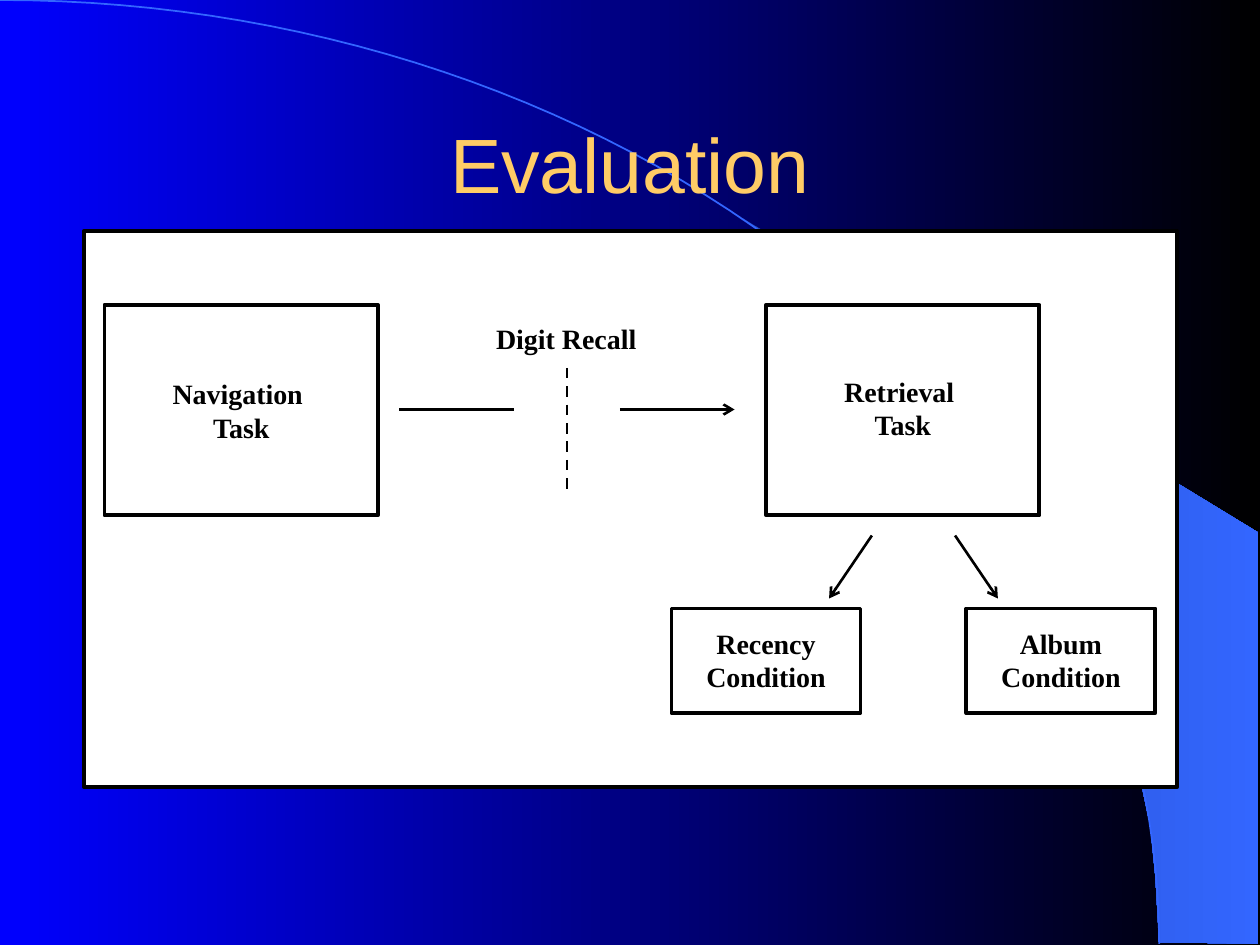
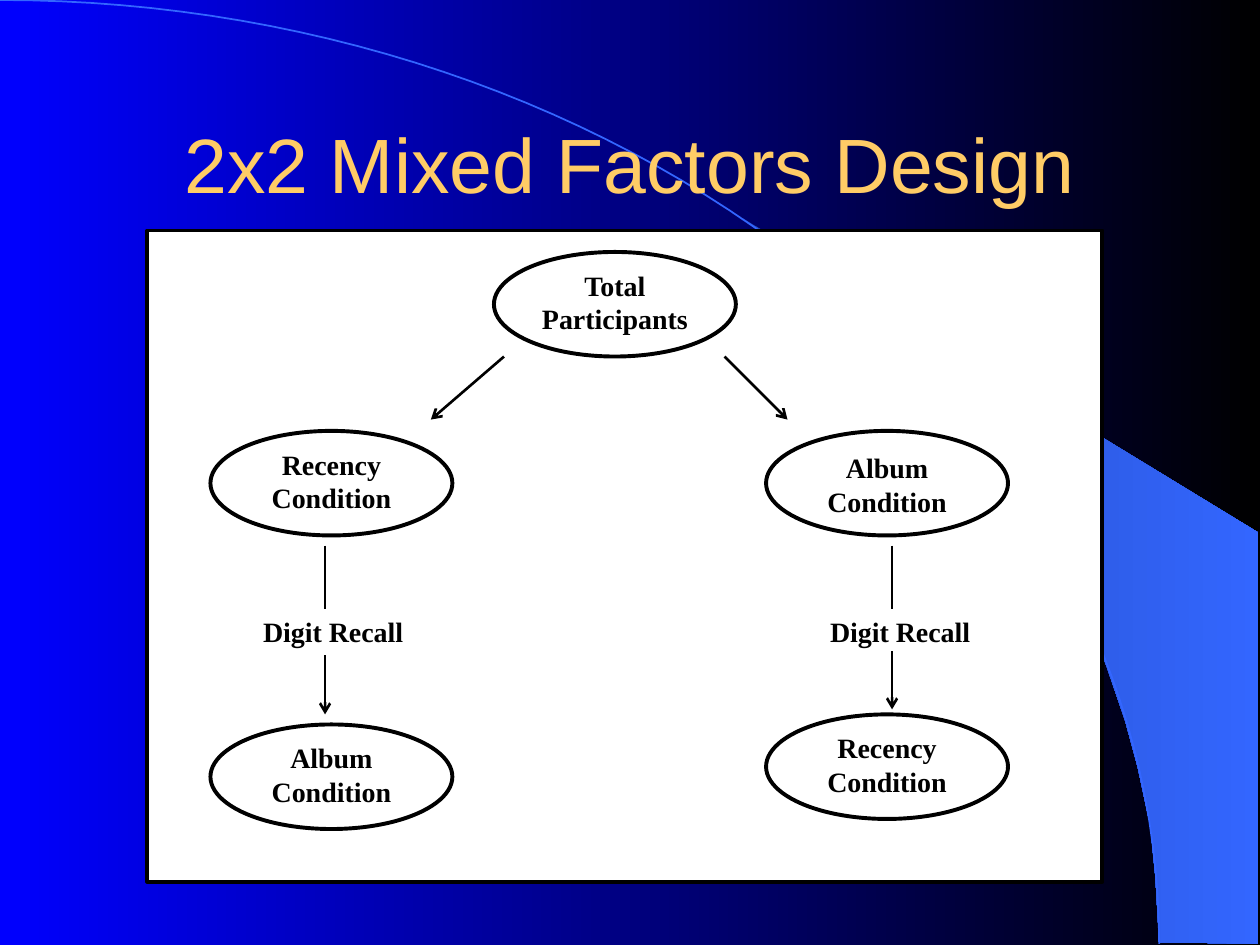
import math

from pptx import Presentation
from pptx import util as u
from pptx.dml.color import RGBColor
from pptx.enum import dml, shapes, text
from pptx.oxml import ns, xmlchemy

COLORS = {
    "sky": "0000FF",
    "night": "000000",
    "wing_dark": "2449B6",
    "accent": "3366FF",
    "title": "FFCC66",
    "panel": "FFFFFF",
    "ink": "000000",
}
TITLE_FONT, LABEL_FONT = "Arial", "Times New Roman"
RECT, OVAL = shapes.MSO_SHAPE.RECTANGLE, shapes.MSO_SHAPE.OVAL
WING = [(9.2, 7.48), (9.99, 7.49), (9.99, 4.23), (5.89, 1.73), (6.24, 1.99),
        (6.53, 2.22), (6.85, 2.5), (7.16, 2.8), (7.62, 3.3), (8.03, 3.84),
        (8.32, 4.31), (8.58, 4.79), (8.78, 5.28), (8.93, 5.72), (9.03, 6.09),
        (9.13, 6.56), (9.17, 6.96)]
ARC_WIDTH, ARC_HEIGHT, ARC_STEPS = 9.2, 7.49, 60
TASK_SIZE, CONDITION_SIZE, OVAL_SIZE = (2.17, 1.67), (1.5, 0.83), (1.92, 0.83)


def rgb(name):
    """Return a palette colour."""
    return RGBColor.from_string(COLORS[name])


def fill_gradient(fill, start, end):
    """Blend two palette colours from left to right."""
    fill.gradient()
    fill.gradient_angle = 0
    for stop, name, position in zip(fill.gradient_stops, (start, end), (0, 1)):
        stop.color.rgb = rgb(name)
        stop.position = position


def add_outline(slide, points, close):
    """Draw a freeform through points given in inches."""
    first, *rest = [(u.Inches(x), u.Inches(y)) for x, y in points]
    builder = slide.shapes.build_freeform(*first)
    builder.add_line_segments(rest, close=close)
    outline = builder.convert_to_shape()
    outline.shadow.inherit = False
    return outline


def style_layout(layout, slide):
    """Give the layout its background, title place and swoosh."""
    fill_gradient(layout.background.fill, "sky", "night")
    title = layout.placeholders[0]
    title.left, title.top = u.Inches(0.75), u.Inches(0.67)
    title.width, title.height = u.Inches(8.5), u.Inches(1.25)

    wing = add_outline(slide, WING, True)
    fill_gradient(wing.fill, "wing_dark", "accent")
    wing.line.fill.background()

    angles = [math.pi / 2 * step / ARC_STEPS for step in range(ARC_STEPS + 1)]
    arc = add_outline(slide, [(ARC_WIDTH * math.sin(a), ARC_HEIGHT * (1 - math.cos(a)))
                              for a in angles], False)
    arc.fill.background()
    arc.line.color.rgb = rgb("accent")
    arc.line.width = u.Pt(1)
    for position, swoosh in enumerate((wing, arc), start=2):
        layout.shapes.element.insert(position, swoosh.element)


def add_run(paragraph, words, font, size, color, bold=False):
    """Add one centred, formatted run."""
    paragraph.alignment = text.PP_ALIGN.CENTER
    run = paragraph.add_run()
    run.text = words
    run.font.name, run.font.size, run.font.bold = font, u.Pt(size), bold
    run.font.color.rgb = rgb(color)


def set_title(slide, words):
    """Fill the title placeholder."""
    frame = slide.shapes.title.text_frame
    frame.vertical_anchor = text.MSO_ANCHOR.MIDDLE
    add_run(frame.paragraphs[0], words, TITLE_FONT, 44, "title")


def add_box(slide, kind, left, top, width, height):
    """Add a white shape with a black border."""
    box = slide.shapes.add_shape(kind, *map(u.Inches, (left, top, width, height)))
    box.shadow.inherit = False
    box.fill.solid()
    box.fill.fore_color.rgb = rgb("panel")
    box.line.color.rgb = rgb("ink")
    box.line.width = u.Pt(2.25)


def add_label(slide, lines, left, top, width, height=0.64):
    """Add a bold centred label, one paragraph a line."""
    label = slide.shapes.add_textbox(*map(u.Inches, (left, top, width, height)))
    frame = label.text_frame
    frame.word_wrap = True
    for number, line in enumerate(lines):
        paragraph = frame.add_paragraph() if number else frame.paragraphs[0]
        add_run(paragraph, line, LABEL_FONT, 16, "ink", True)


def add_node(slide, kind, lines, left, top, size, label_width, label_drop):
    """Add a box with a label centred across it."""
    add_box(slide, kind, left, top, *size)
    add_label(slide, lines, left + (size[0] - label_width) / 2, top + label_drop, label_width)


def add_link(slide, start, end, arrow=False, dashed=False):
    """Connect two points with a line, arrow or dashed line."""
    link = slide.shapes.add_connector(shapes.MSO_CONNECTOR.STRAIGHT,
                                      *map(u.Inches, (*start, *end)))
    link.line.color.rgb = rgb("ink")
    link.line.width = u.Pt(1.5)
    if dashed:
        link.line.dash_style = dml.MSO_LINE.DASH
    properties = link.element.spPr
    if arrow:
        tail = xmlchemy.OxmlElement("a:tailEnd")
        tail.set("type", "arrow")
        properties.find(ns.qn("a:ln")).append(tail)
    properties.append(xmlchemy.OxmlElement("a:effectLst"))


def build_evaluation(slide):
    """Show the order of tasks and the two retrieval conditions."""
    set_title(slide, "Evaluation")
    add_box(slide, RECT, 0.67, 1.83, 8.67, 4.42)
    for task, left, drop in (("Navigation ", 0.83, 0.52), ("Retrieval ", 6.08, 0.5)):
        add_node(slide, RECT, [task, "Task"], left, 2.42, TASK_SIZE, 1.83, drop)
    for condition, left in (("Recency", 5.33), ("Album", 7.67)):
        add_node(slide, RECT, [condition, "Condition"], left, 4.83, CONDITION_SIZE, 1.83, 0.09)
    add_label(slide, ["Digit Recall"], 3.58, 2.5, 1.83, 0.37)
    add_link(slide, (3.17, 3.25), (4.08, 3.25))
    add_link(slide, (4.92, 3.25), (5.83, 3.25), arrow=True)
    add_link(slide, (4.5, 2.92), (4.5, 3.92), dashed=True)
    add_link(slide, (6.92, 4.25), (6.58, 4.75), arrow=True)
    add_link(slide, (7.58, 4.25), (7.92, 4.75), arrow=True)


def build_design(slide):
    """Show both orders in which participants meet the conditions."""
    set_title(slide, "2x2 Mixed Factors Design")
    add_box(slide, RECT, 1.17, 1.83, 7.58, 5.17)
    nodes = [
        ("Total Participants", 3.92, 2, 0.08),
        ("Recency Condition", 1.67, 3.42, 0.08),
        ("Album Condition", 6.08, 3.42, 0.11),
        ("Album Condition", 1.67, 5.75, 0.08),
        ("Recency Condition", 6.08, 5.67, 0.08),
    ]
    for words, left, top, drop in nodes:
        add_node(slide, OVAL, [words], left, top, OVAL_SIZE, 1.42, drop)
    add_link(slide, (4, 2.83), (3.42, 3.33), arrow=True)
    add_link(slide, (5.75, 2.83), (6.25, 3.33), arrow=True)
    for center, arrow_top, arrow_end in ((2.58, 5.2, 5.67), (7.08, 5.17, 5.63)):
        add_link(slide, (center, 4.33), (center, 4.83))
        add_label(slide, ["Digit Recall"], center - 0.77, 4.83, 1.67, 0.37)
        add_link(slide, (center, arrow_top), (center, arrow_end), arrow=True)


def main():
    """Build and save the presentation."""
    deck = Presentation()
    deck.slide_width, deck.slide_height = u.Inches(10), u.Inches(7.5)
    layout = deck.slide_layouts[5]
    evaluation, design = [deck.slides.add_slide(layout) for _ in range(2)]
    style_layout(layout, evaluation)
    build_evaluation(evaluation)
    build_design(design)
    deck.save("out.pptx")


if __name__ == "__main__":
    main()
